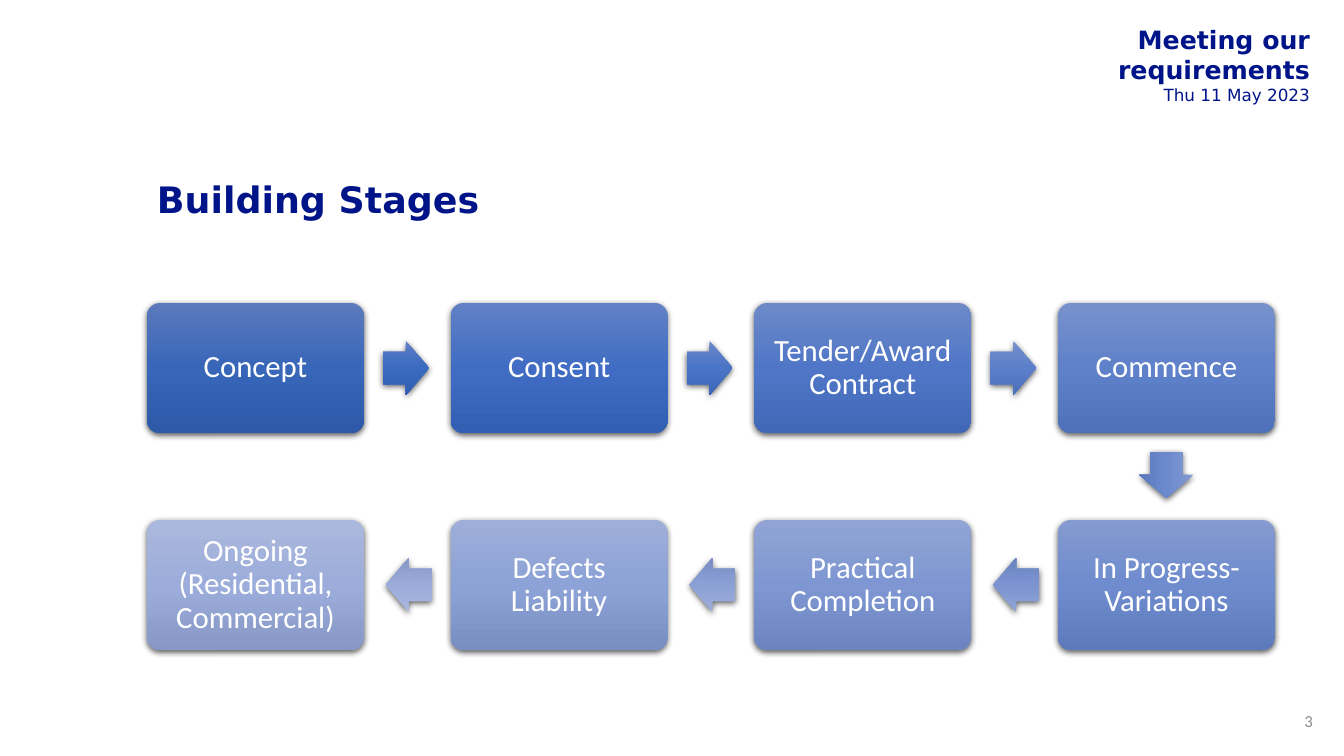
from copy import deepcopy
from dataclasses import dataclass

from pptx import Presentation
from pptx import util as u
from pptx.dml.color import RGBColor
from pptx.enum import shapes, text
from pptx.oxml import parse_xml
from pptx.oxml.ns import nsdecls, qn

HEADER = ("Meeting our requirements", "Thu 11 May 2023")
TITLE = "Building Stages"
PAGE_NUMBER = "3"

# Stage label, box gradient, gradient of the arrow to the next stage
STAGES = [
    ("Concept", "5C7ABD 3866B8 2D59A8", "5E7EC4 3B6BC1 2F5EB1"),
    ("Consent", "6280C5 406DC3 325FB4", "6987C8 4A75C6 3C66B7"),
    ("Tender/Award Contract", "6D89C8 5077C7 4168B7", "758FCC 5B7FCA 4B6FB9"),
    ("Commence", "7891CC 5F81CA 4F71B9", "8299D0 6B8ACE 5A79BC"),
    ("In Progress- Variations", "849AD0 6F8CCE 5D7ABC", "8FA3D4 7C95D2 6983BF"),
    ("Practical Completion", "91A4D5 7E97D2 6C84BF", "9DADD9 8CA0D6 788DC3"),
    ("Defects Liability", "9EAED9 8DA2D6 798EC3", "AAB7DD 9BACDB 8697C6"),
    ("Ongoing (Residential, Commercial)", "ABB8DD 9CADDB 8798C6", None),
]


@dataclass(frozen=True)
class Theme:
    heading_font: str = "DejaVu Sans"
    body_font: str = "Calibri"
    navy: str = "001489"
    grey: str = "8C8C8C"
    white: str = "FFFFFF"
    title_size: int = 26
    stage_size: int = 22
    header_size: int = 18
    small_size: int = 12


THEME = Theme()
PX = 914400 / 100.8
SLIDE_W, SLIDE_H = 1344, 756
COLUMNS = 4
FLOW_LEFT, FLOW_RIGHT, FLOW_TOP = 147, 1275, 303
BOX_W, BOX_H = 217, 130
PITCH_X, PITCH_Y = (FLOW_RIGHT - FLOW_LEFT - BOX_W) / (COLUMNS - 1), 217
ARROW_W, ARROW_H, ARROW_GAP = 46, 54, 19
BOX_INSET = 13


def px(length):
    return u.Emu(round(length * PX))


def style(para, size, color, font, bold=False, align=text.PP_ALIGN.LEFT):
    para.alignment = align
    para.font.name, para.font.size, para.font.bold = font, u.Pt(size), bold
    para.font.color.rgb = RGBColor.from_string(color)


def add_text(page, area, lines, anchor, insets=(10, 5)):
    """Add a wrapping text box and return its paragraphs."""
    frame = page.shapes.add_textbox(*map(px, area)).text_frame
    frame.word_wrap, frame.vertical_anchor = True, anchor
    frame.margin_left = frame.margin_right = px(insets[0])
    frame.margin_top = frame.margin_bottom = px(insets[1])
    frame.text = "\n".join(lines)
    return frame.paragraphs


def add_glossy(page, kind, area, gradient, adjustments):
    """Add a shape with a vertical three-colour gradient and a soft shadow."""
    shape = page.shapes.add_shape(kind, *map(px, area))
    for index, value in enumerate(adjustments):
        shape.adjustments[index] = value
    shape.fill.gradient()
    shape.fill.gradient_angle = 270
    stops = shape._element.spPr.find(".//" + qn("a:gsLst"))
    stops.insert(1, deepcopy(stops[0]))
    for stop, color, position in zip(shape.fill.gradient_stops, gradient.split(), (0, 0.5, 1)):
        stop.color.rgb, stop.position = RGBColor.from_string(color), position
    shape.line.fill.background()
    shape.shadow.inherit = False
    shape._element.spPr.find(qn("a:effectLst")).append(parse_xml(
        f'<a:outerShdw {nsdecls("a")} blurRad="57150" dist="19050" dir="5400000" '
        'algn="ctr" rotWithShape="0"><a:srgbClr val="000000">'
        '<a:alpha val="63000"/></a:srgbClr></a:outerShdw>'))
    return shape


def box_origin(index):
    """Place a stage on the path that runs right, then back left below."""
    row, column = divmod(index, COLUMNS)
    if row % 2:
        column = COLUMNS - 1 - column
    return FLOW_LEFT + column * PITCH_X, FLOW_TOP + row * PITCH_Y


def add_stage(page, index, label, gradient):
    box = add_glossy(page, shapes.MSO_SHAPE.ROUNDED_RECTANGLE,
                     (*box_origin(index), BOX_W, BOX_H), gradient, [0.1])
    frame = box.text_frame
    frame.word_wrap, frame.vertical_anchor = True, text.MSO_ANCHOR.MIDDLE
    frame.margin_left = frame.margin_right = px(BOX_INSET)
    frame.margin_top = frame.margin_bottom = px(BOX_INSET)
    frame.text = label
    para = frame.paragraphs[0]
    para.line_spacing = 0.9
    style(para, THEME.stage_size, THEME.white, THEME.body_font, align=text.PP_ALIGN.CENTER)


def add_arrow(page, index, gradient):
    """Add the arrow that leaves a stage towards the next one."""
    left, top = box_origin(index)
    next_left, next_top = box_origin(index + 1)
    center_x, center_y = left + BOX_W / 2, top + BOX_H / 2
    reach = ARROW_GAP + ARROW_W / 2
    if next_top > top:
        rotation = 90
        center_y += BOX_H / 2 + reach
    else:
        rotation = 0 if next_left > left else 180
        center_x += (BOX_W / 2 + reach) * (1 if next_left > left else -1)
    area = (center_x - ARROW_W / 2, center_y - ARROW_H / 2, ARROW_W, ARROW_H)
    arrow = add_glossy(page, shapes.MSO_SHAPE.RIGHT_ARROW, area, gradient, [0.6, 0.5])
    arrow.rotation = rotation


def main():
    deck = Presentation()
    deck.slide_width, deck.slide_height = px(SLIDE_W), px(SLIDE_H)
    page = deck.slides.add_slide(deck.slide_layouts[6])

    right = text.PP_ALIGN.RIGHT
    name, date = add_text(page, (935, 20, 382, 89), HEADER, text.MSO_ANCHOR.TOP, (7, 4))
    style(name, THEME.header_size, THEME.navy, THEME.heading_font, True, right)
    style(date, THEME.small_size, THEME.navy, THEME.heading_font, align=right)

    title, = add_text(page, (147, 151, 1129, 102), [TITLE], text.MSO_ANCHOR.MIDDLE)
    title.line_spacing = 0.9
    style(title, THEME.title_size, THEME.navy, THEME.heading_font, True)

    number, = add_text(page, (1281, 701, 42, 40), [PAGE_NUMBER], text.MSO_ANCHOR.MIDDLE)
    style(number, THEME.small_size, THEME.grey, THEME.body_font, align=right)

    for index, (label, box_gradient, arrow_gradient) in enumerate(STAGES):
        add_stage(page, index, label, box_gradient)
        if arrow_gradient:
            add_arrow(page, index, arrow_gradient)

    deck.save("out.pptx")


if __name__ == "__main__":
    main()
